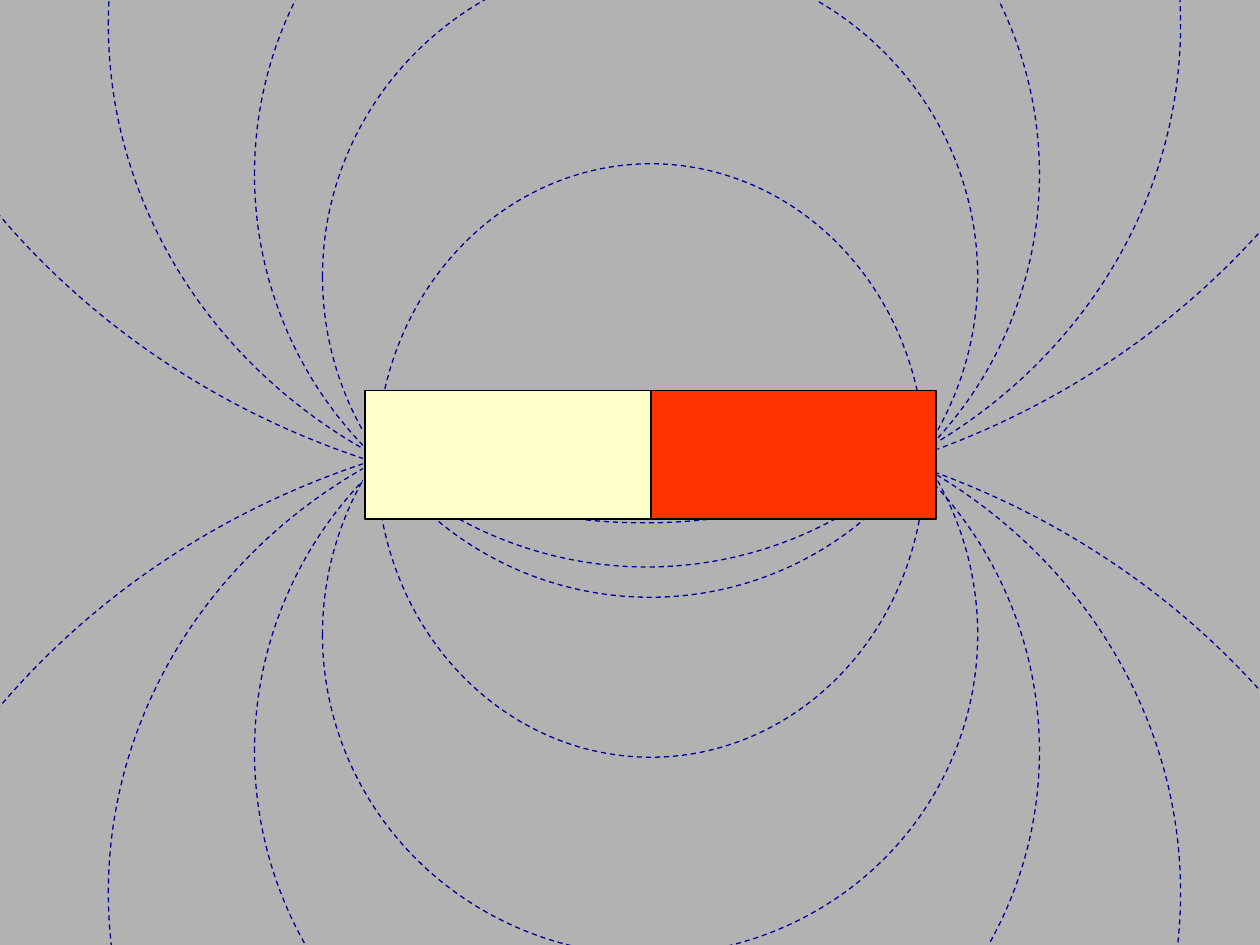
"""Draw a bar magnet surrounded by dashed magnetic field lines."""
from dataclasses import dataclass
from typing import Optional

from pptx import Presentation
from pptx.dml.color import RGBColor
from pptx.enum.dml import MSO_LINE
from pptx.enum.shapes import MSO_SHAPE
from pptx.util import Inches, Pt

OVAL = MSO_SHAPE.OVAL
RECTANGLE = MSO_SHAPE.RECTANGLE
DASH = MSO_LINE.DASH


@dataclass(frozen=True)
class Theme:
    background: str = "B2B2B2"
    field: str = "000099"
    outline: str = "000000"
    south: str = "FFFFCC"
    north: str = "FF3300"
    field_width: float = 0.75
    outline_width: float = 1


@dataclass(frozen=True)
class FieldLoops:
    left: float
    tops: tuple[float, ...]
    width: float
    height: float


@dataclass(frozen=True)
class Block:
    left: float
    top: float
    width: float
    height: float
    fill: str
    outline: Optional[str] = None


THEME = Theme()
LOOPS = (
    FieldLoops(2.02, (-1.73, 2.85), 6.23, 6.23),
    FieldLoops(2.56, (-0.35, 2.49), 5.2, 5.09),
    FieldLoops(0.86, (-3.76, 3.13), 8.51, 7.91),
    FieldLoops(-1.39, (-8, 3.33), 12.89, 11.99),
    FieldLoops(2.99, (1.3,), 4.35, 4.71),
)
COVER = ((3.43, 3.04), (4.3, 2.58), (4.88, 2.48), (5.33, 2.44),
         (6.15, 2.63), (6.96, 3.04), (7, 3.12), (3.38, 3.12))
BLOCKS = (
    Block(2.88, 3.2, 0.18, 0.93, THEME.background),
    Block(7.35, 3.2, 0.09, 0.93, THEME.background),
    Block(5.16, 3.1, 2.27, 1.02, THEME.north, THEME.outline),
    Block(2.9, 3.1, 2.27, 1.02, THEME.south, THEME.outline),
)


def style(sp, fill: Optional[str], line: Optional[str], width: float = 0) -> None:
    """Set the fill and line of a shape and remove its shadow."""
    sp.shadow.inherit = False
    if fill:
        sp.fill.solid()
        sp.fill.fore_color.rgb = RGBColor.from_string(fill)
    else:
        sp.fill.background()
    if line:
        sp.line.color.rgb = RGBColor.from_string(line)
        sp.line.width = Pt(width)
    else:
        sp.line.fill.background()


def draw_loops(shapes, loops: FieldLoops) -> None:
    """Draw equal dashed ellipses at each of the given tops."""
    for top in loops.tops:
        sp = shapes.add_shape(OVAL, Inches(loops.left), Inches(top),
                              Inches(loops.width), Inches(loops.height))
        style(sp, None, THEME.field, THEME.field_width)
        sp.line.dash_style = DASH


def draw_cover(shapes) -> None:
    """Hide the field lines just above the magnet."""
    points = [(Inches(x), Inches(y)) for x, y in COVER]
    builder = shapes.build_freeform(*points[0])
    builder.add_line_segments(points[1:], close=True)
    style(builder.convert_to_shape(), THEME.background, None)


def draw_block(shapes, block: Block) -> None:
    """Draw one filled rectangle of the magnet."""
    sp = shapes.add_shape(RECTANGLE, Inches(block.left), Inches(block.top),
                          Inches(block.width), Inches(block.height))
    style(sp, block.fill, block.outline, THEME.outline_width)


def main() -> None:
    """Build and save the slide."""
    prs = Presentation()
    prs.slide_width, prs.slide_height = Inches(10), Inches(7.5)
    s = prs.slides.add_slide(prs.slide_layouts[6])
    s.background.fill.solid()
    s.background.fill.fore_color.rgb = RGBColor.from_string(THEME.background)

    for loops in LOOPS:
        paired = len(loops.tops) > 1
        draw_loops(s.shapes.add_group_shape().shapes if paired else s.shapes, loops)

    magnet = s.shapes.add_group_shape().shapes
    draw_cover(magnet)
    for block in BLOCKS:
        draw_block(magnet, block)
    prs.save("out.pptx")


if __name__ == "__main__":
    main()
